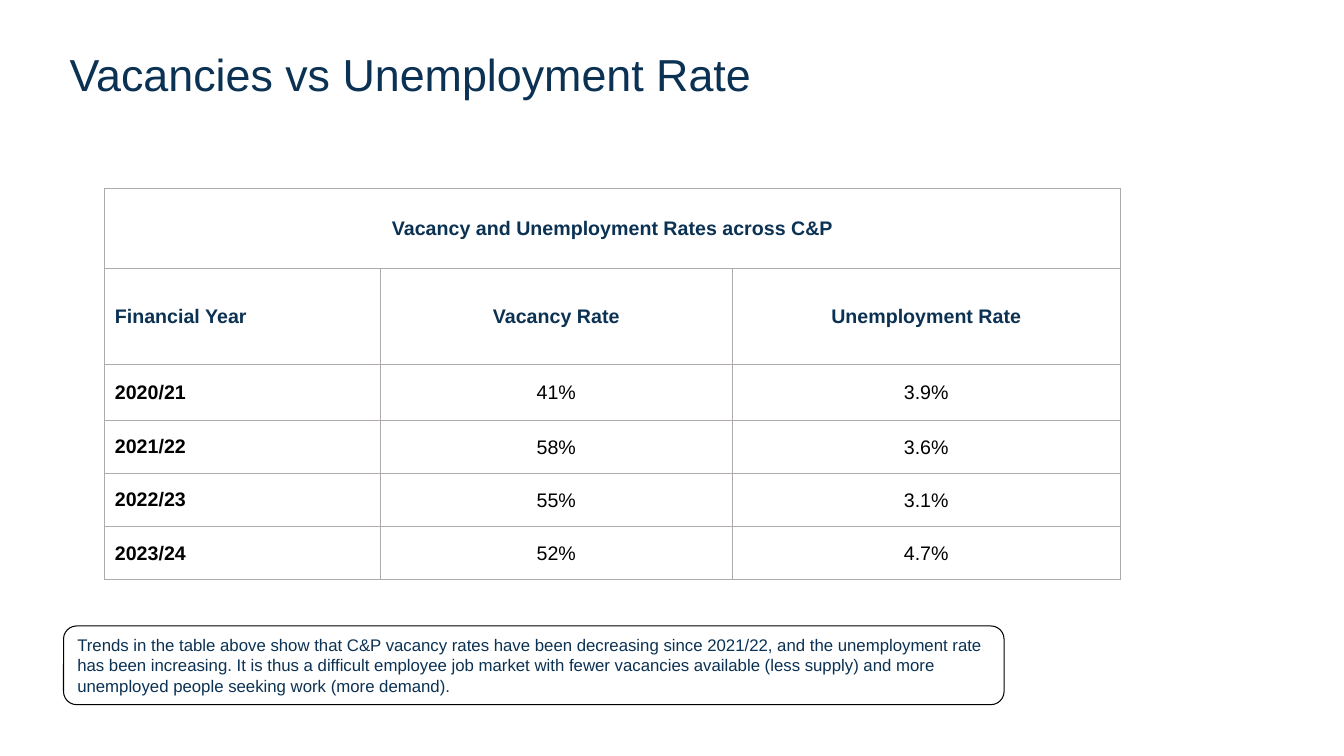
"""Build a slide comparing vacancy and unemployment rates by financial year."""
from dataclasses import dataclass

import lxml.etree
import pptx
import pptx.dml.color
import pptx.enum.shapes
import pptx.enum.text
import pptx.oxml
import pptx.oxml.ns
import pptx.util

Pt = pptx.util.Pt
RGBColor = pptx.dml.color.RGBColor
Align = pptx.enum.text.PP_ALIGN
Anchor = pptx.enum.text.MSO_ANCHOR

NAVY = RGBColor(0x0B, 0x31, 0x53)
BLACK = RGBColor(0x00, 0x00, 0x00)
BORDER_GREY = RGBColor(0xAF, 0xAB, 0xAB)
FONT = "Arial"
COLUMN_WIDTHS = (196.8, 251.4, 277.2)
ROW_HEIGHTS = (57, 68.6, 39.9, 38, 38, 38)


@dataclass(frozen=True)
class TextStyle:
    size: float
    color: RGBColor
    bold: bool = False
    align: Align = Align.LEFT


@dataclass(frozen=True)
class YearRates:
    year: str
    vacancy: str
    unemployment: str


TITLE = TextStyle(32, NAVY)
NOTE = TextStyle(12, NAVY)
HEADING = TextStyle(14, NAVY, bold=True)
CENTRED_HEADING = TextStyle(14, NAVY, bold=True, align=Align.CENTER)
YEAR = TextStyle(14, BLACK, bold=True)
RATE = TextStyle(14, BLACK, align=Align.CENTER)

RATES = (
    YearRates("2020/21", "41%", "3.9%"),
    YearRates("2021/22", "58%", "3.6%"),
    YearRates("2022/23", "55%", "3.1%"),
    YearRates("2023/24", "52%", "4.7%"),
)


def write(frame: pptx.text.text.TextFrame, text: str, style: TextStyle) -> None:
    paragraph = frame.paragraphs[0]
    paragraph.alignment = style.align
    run = paragraph.add_run()
    run.text = text
    run.font.name = FONT
    run.font.size = Pt(style.size)
    run.font.bold = style.bold
    run.font.color.rgb = style.color


def add_borders(cell: pptx.table._Cell) -> None:
    properties = cell._tc.get_or_add_tcPr()
    for position, side in enumerate(("lnL", "lnR", "lnT", "lnB")):
        border = pptx.oxml.parse_xml(
            f'<a:{side} {pptx.oxml.ns.nsdecls("a")} w="{Pt(1)}"><a:solidFill>'
            f'<a:srgbClr val="{BORDER_GREY}"/></a:solidFill></a:{side}>'
        )
        properties.insert(position, border)


def add_title(slide: pptx.slide.Slide) -> None:
    title = slide.shapes.add_textbox(Pt(49.7), Pt(37.4), Pt(828), Pt(95.8))
    frame = title.text_frame
    frame.word_wrap = True
    frame.margin_left = frame.margin_right = Pt(0)
    frame.margin_top = frame.margin_bottom = Pt(0)
    frame.paragraphs[0].line_spacing = 0.9
    write(frame, "Vacancies vs Unemployment Rate", TITLE)


def add_rates_table(slide: pptx.slide.Slide) -> None:
    table = slide.shapes.add_table(
        len(ROW_HEIGHTS), len(COLUMN_WIDTHS), Pt(74.9), Pt(134.8),
        Pt(sum(COLUMN_WIDTHS)), Pt(sum(ROW_HEIGHTS)),
    ).table
    table.horz_banding = False
    for column, width in zip(table.columns, COLUMN_WIDTHS):
        column.width = Pt(width)
    for row, height in zip(table.rows, ROW_HEIGHTS):
        row.height = Pt(height)
    for cell in table.iter_cells():
        cell.fill.background()
        cell.vertical_anchor = Anchor.MIDDLE
        add_borders(cell)

    table.cell(0, 0).merge(table.cell(0, 2))
    write(table.cell(0, 0).text_frame,
          "Vacancy and Unemployment Rates across C&P", CENTRED_HEADING)
    write(table.cell(1, 0).text_frame, "Financial Year", HEADING)
    for column, heading in enumerate(("Vacancy Rate", "Unemployment Rate"), 1):
        write(table.cell(1, column).text_frame, heading, CENTRED_HEADING)
    for row, rates in enumerate(RATES, 2):
        write(table.cell(row, 0).text_frame, rates.year, YEAR)
        for column, rate in enumerate((rates.vacancy, rates.unemployment), 1):
            cell = table.cell(row, column)
            cell.margin_left = cell.margin_right = cell.margin_top = Pt(0.75)
            cell.margin_bottom = Pt(0)
            write(cell.text_frame, rate, RATE)


def add_trend_note(slide: pptx.slide.Slide) -> None:
    note = slide.shapes.add_shape(
        pptx.enum.shapes.MSO_SHAPE.ROUNDED_RECTANGLE,
        Pt(45.4), Pt(447.1), Pt(671.8), Pt(56.2),
    )
    note.shadow.inherit = False
    note.fill.background()
    note.line.color.rgb = BLACK
    note.line.width = Pt(0.75)
    frame = note.text_frame
    frame.word_wrap = True
    frame.auto_size = pptx.enum.text.MSO_AUTO_SIZE.SHAPE_TO_FIT_TEXT
    frame.vertical_anchor = Anchor.MIDDLE
    write(
        frame,
        "Trends in the table above show that C&P vacancy rates have been "
        "decreasing since 2021/22, and the unemployment rate has been "
        "increasing. It is thus a difficult employee job market with fewer "
        "vacancies available (less supply) and more unemployed people "
        "seeking work (more demand).",
        NOTE,
    )


def main() -> None:
    presentation = pptx.Presentation()
    presentation.slide_width = Pt(960)
    presentation.slide_height = Pt(540)
    slide = presentation.slides.add_slide(presentation.slide_layouts[6])
    add_title(slide)
    add_rates_table(slide)
    add_trend_note(slide)
    presentation.save("out.pptx")


if __name__ == "__main__":
    main()
